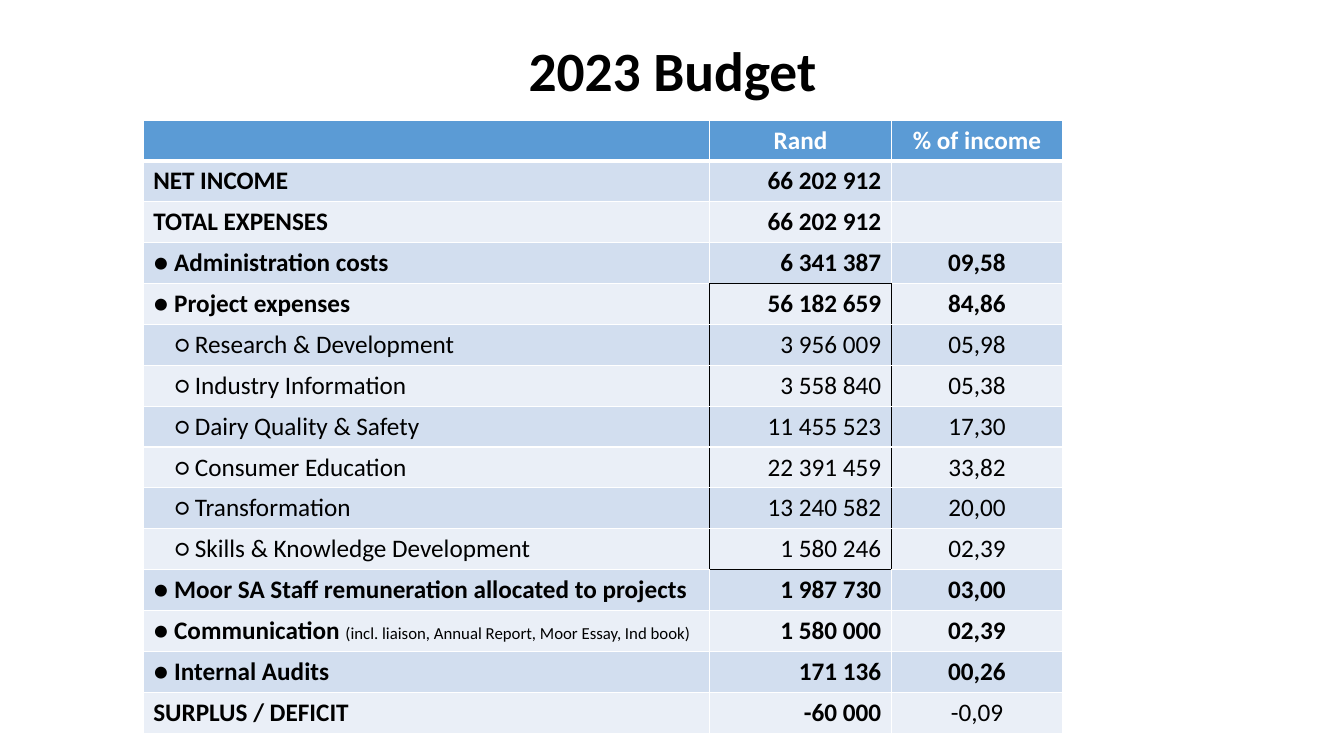
from dataclasses import dataclass

from lxml.etree import SubElement
from pptx import Presentation
from pptx.dml.color import RGBColor
from pptx.enum.text import MSO_ANCHOR as Anchor, PP_ALIGN as Align
from pptx.oxml.ns import qn
from pptx.slide import Slide
from pptx.table import Table, _Cell as Cell
from pptx.util import Emu, Pt

FONT = "Calibri"
COLORS = {
    "header": "5B9BD5",
    "band_dark": "D2DEEF",
    "band_light": "EAEFF7",
    "white": "FFFFFF",
    "black": "000000",
}
COLUMN_WIDTHS = (562, 180, 170)
COLUMN_ALIGNS = (Align.LEFT, Align.RIGHT, Align.CENTER)
ROW_HEIGHT = 39
RAND_COLUMN = 1
SUB_INDENT = 22


@dataclass(frozen=True)
class BudgetRow:
    label: str
    rand: str
    percent: str = ""
    note: str = ""
    bold: bool = True
    bold_percent: bool = True
    sub: bool = False


def project(label: str, rand: str, percent: str) -> BudgetRow:
    return BudgetRow(f"○ {label}", rand, percent, bold=False, bold_percent=False, sub=True)


ROWS = [
    BudgetRow("", "Rand", "% of income"),
    BudgetRow("NET INCOME", "66 202 912"),
    BudgetRow("TOTAL EXPENSES", "66 202 912"),
    BudgetRow("● Administration costs", "6 341 387", "09,58"),
    BudgetRow("● Project expenses", "56 182 659", "84,86"),
    project("Research & Development", "3 956 009", "05,98"),
    project("Industry Information", "3 558 840", "05,38"),
    project("Dairy Quality & Safety", "11 455 523", "17,30"),
    project("Consumer Education", "22 391 459", "33,82"),
    project("Transformation", "13 240 582", "20,00"),
    project("Skills & Knowledge Development", "1 580 246", "02,39"),
    BudgetRow("● Moor SA Staff remuneration allocated to projects", "1 987 730", "03,00"),
    BudgetRow("● Communication ", "1 580 000", "02,39",
              note="(incl. liaison, Annual Report, Moor Essay, Ind book)"),
    BudgetRow("● Internal Audits", "171 136", "00,26"),
    BudgetRow("SURPLUS / DEFICIT", "-60 000", "-0,09", bold_percent=False),
]
# The outlined block runs from the project total to the last project
SUB_ROWS = [index for index, row in enumerate(ROWS) if row.sub]
BOX_FIRST, BOX_LAST = SUB_ROWS[0] - 1, SUB_ROWS[-1]


def px(value: int) -> Emu:
    """One px is a hundredth of an inch."""
    return Emu(value * 9144)


def color(name: str) -> RGBColor:
    return RGBColor.from_string(COLORS[name])


def style_font(font, size: float, bold: bool, color_name: str) -> None:
    font.name, font.size, font.bold = FONT, Pt(size), bold
    font.color.rgb = color(color_name)


def set_borders(cell: Cell, row: int, column: int) -> None:
    in_box = BOX_FIRST <= row <= BOX_LAST
    in_rand = column == RAND_COLUMN
    black = {
        "L": in_box and column in (RAND_COLUMN, RAND_COLUMN + 1),
        "R": in_box and column in (RAND_COLUMN - 1, RAND_COLUMN),
        "T": in_rand and row in (BOX_FIRST, BOX_LAST + 1),
        "B": in_rand and row in (BOX_FIRST - 1, BOX_LAST),
    }
    properties = cell._tc.get_or_add_tcPr()
    for side, is_black in black.items():
        under_header = (row, side) in ((0, "B"), (1, "T"))
        line = SubElement(properties, qn(f"a:ln{side}"), w=str(Pt(3 if under_header else 1)))
        fill = SubElement(line, qn("a:solidFill"))
        SubElement(fill, qn("a:srgbClr"), val=COLORS["black" if is_black else "white"])


def fill_cell(cell: Cell, row: int, column: int) -> None:
    entry = ROWS[row]
    is_header = row == 0
    set_borders(cell, row, column)
    cell.fill.solid()
    band = "band_dark" if row % 2 else "band_light"
    cell.fill.fore_color.rgb = color("header" if is_header else band)
    if entry.sub and column == 0:
        cell.margin_left = px(10 + SUB_INDENT)

    para = cell.text_frame.paragraphs[0]
    para.alignment = Align.CENTER if is_header else COLUMN_ALIGNS[column]
    bold = entry.bold_percent if column == 2 else entry.bold
    style_font(para.font, 18, bold, "white" if is_header else "black")
    text = (entry.label, entry.rand, entry.percent)[column]
    if text:
        span = para.add_run()
        span.text = text
        style_font(span.font, 18, bold, "white" if is_header else "black")
    if entry.note and column == 0:
        span = para.add_run()
        span.text = entry.note
        style_font(span.font, 12, False, "black")


def add_title(page: Slide) -> None:
    title = page.shapes.title
    title.left, title.top, title.width, title.height = px(92), px(40), px(1150), px(66)
    title.text_frame.text = "2023 Budget"
    title.text_frame.vertical_anchor = Anchor.MIDDLE
    para = title.text_frame.paragraphs[0]
    para.alignment = Align.CENTER
    para.line_spacing = 0.9
    style_font(para.font, 39.6, True, "black")


def add_budget_table(page: Slide) -> None:
    frame = page.shapes.add_table(
        len(ROWS), len(COLUMN_WIDTHS), px(142), px(119),
        px(sum(COLUMN_WIDTHS)), px(ROW_HEIGHT * len(ROWS)))
    table: Table = frame.table
    table.horz_banding = False
    for column, width in zip(table.columns, COLUMN_WIDTHS):
        column.width = px(width)
    for row in range(len(ROWS)):
        table.rows[row].height = px(ROW_HEIGHT)
        for column in range(len(COLUMN_WIDTHS)):
            fill_cell(table.cell(row, column), row, column)


def main() -> None:
    deck = Presentation()
    deck.slide_width, deck.slide_height = px(1333), px(750)
    page = deck.slides.add_slide(deck.slide_layouts[5])
    add_title(page)
    add_budget_table(page)
    deck.save("out.pptx")


if __name__ == "__main__":
    main()
